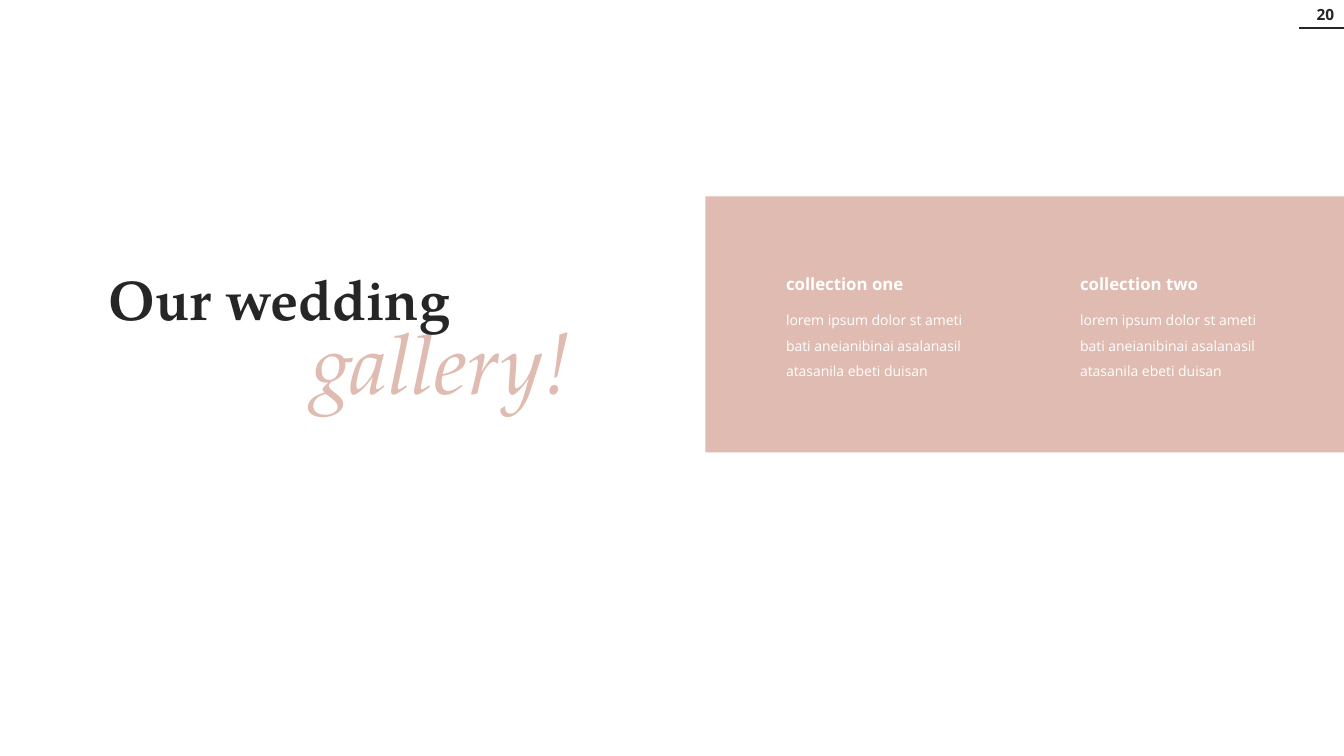
"""Build the wedding gallery slide with its two collections."""
from dataclasses import dataclass

from lxml.etree import SubElement
from pptx import Presentation
from pptx.dml.color import RGBColor as Rgb
from pptx.enum.shapes import MSO_CONNECTOR as Link, MSO_SHAPE as Form
from pptx.enum.text import MSO_AUTO_SIZE as Fit, PP_ALIGN as Align
from pptx.oxml.ns import qn
from pptx.slide import Slide
from pptx.util import Cm, Pt

WIDE, HIGH = 33.87, 19.05
ROSE, INK, WHITE = "DFBBB1", "262626", "FFFFFF"
SANS, SERIF = "Open Sans", "TeX Gyre Pagella"
LOREM = "lorem ipsum dolor st ameti bati aneianibinai asalanasil atasanila ebeti duisan"
LEFT, STEP = 19.56, 7.41


@dataclass
class Label:
    text: str
    left: float
    top: float
    width: float
    height: float
    size: int
    color: str
    font: str = SANS
    bold: bool = False
    italic: bool = False
    space: float = 1.0
    wrap: bool = True
    align: Align = Align.LEFT


def tint(code: str) -> Rgb:
    return Rgb.from_string(code)


def write(slide: Slide, label: Label) -> None:
    box = slide.shapes.add_textbox(
        Cm(label.left), Cm(label.top), Cm(label.width), Cm(label.height))
    frame = box.text_frame
    frame.word_wrap = label.wrap
    frame.auto_size = Fit.SHAPE_TO_FIT_TEXT
    para = frame.paragraphs[0]
    para.text = label.text
    para.alignment = label.align
    para.line_spacing = label.space
    font = para.font
    font.name, font.size = label.font, Pt(label.size)
    font.bold, font.italic = label.bold, label.italic
    font.color.rgb = tint(label.color)


def panel(slide: Slide) -> None:
    left, top, height = 17.78, 4.95, 6.45
    shape = slide.shapes.add_shape(
        Form.RECTANGLE, Cm(left), Cm(top), Cm(WIDE - left), Cm(height))
    shape.shadow.inherit = False
    shape.fill.solid()
    shape.fill.fore_color.rgb = tint(ROSE)
    shape.line.fill.background()


def rule(slide: Slide) -> None:
    line = slide.shapes.add_connector(
        Link.STRAIGHT, Cm(32.74), Cm(0.71), Cm(WIDE), Cm(0.71))
    line.line.color.rgb = tint(INK)
    line.line.width = Pt(1.5)
    SubElement(line._element.spPr, qn("a:effectLst"))


def main() -> None:
    deck = Presentation()
    deck.slide_width, deck.slide_height = Cm(WIDE), Cm(HIGH)
    slide = deck.slides.add_slide(deck.slide_layouts[6])
    panel(slide)
    for col, name in enumerate(("collection one", "collection two")):
        left = LEFT + col * STEP
        write(slide, Label(name, left, 6.53, 3.63, 0.94, 12, WHITE,
                           bold=True, space=1.5))
        write(slide, Label(LOREM, left, 7.52, 5.54, 2.11, 10, WHITE, space=1.5))
    write(slide, Label("gallery!", 7.59, 7.7, 8.1, 2.82, 60, ROSE, SERIF, italic=True))
    write(slide, Label("Our wedding", 2.49, 6.53, 10.67, 1.96, 40, INK, SERIF, bold=True))
    write(slide, Label("20", 32.92, 0, 0.97, 0.74, 11, INK, bold=True,
                       wrap=False, align=Align.CENTER))
    rule(slide)
    deck.save("out.pptx")


if __name__ == "__main__":
    main()
